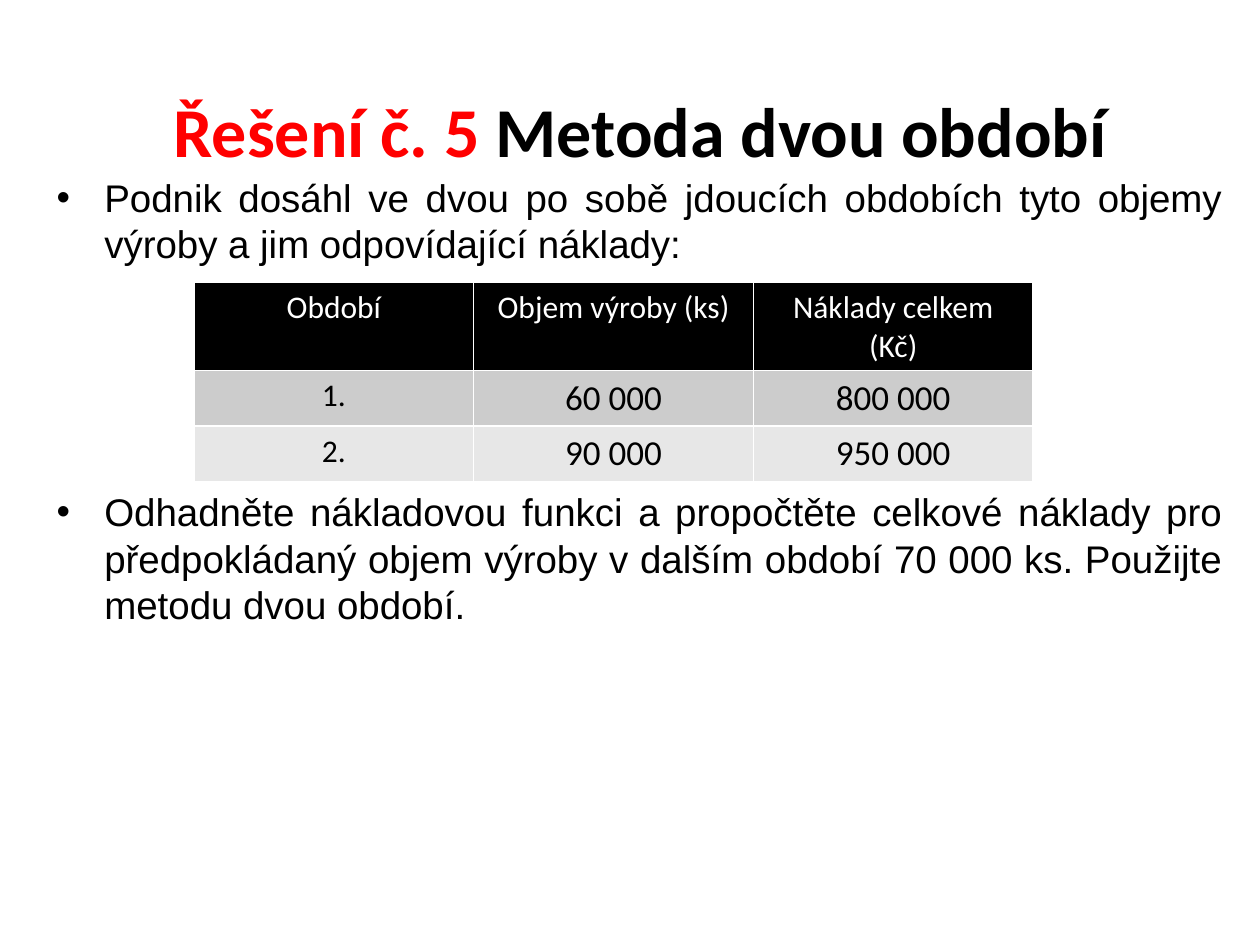
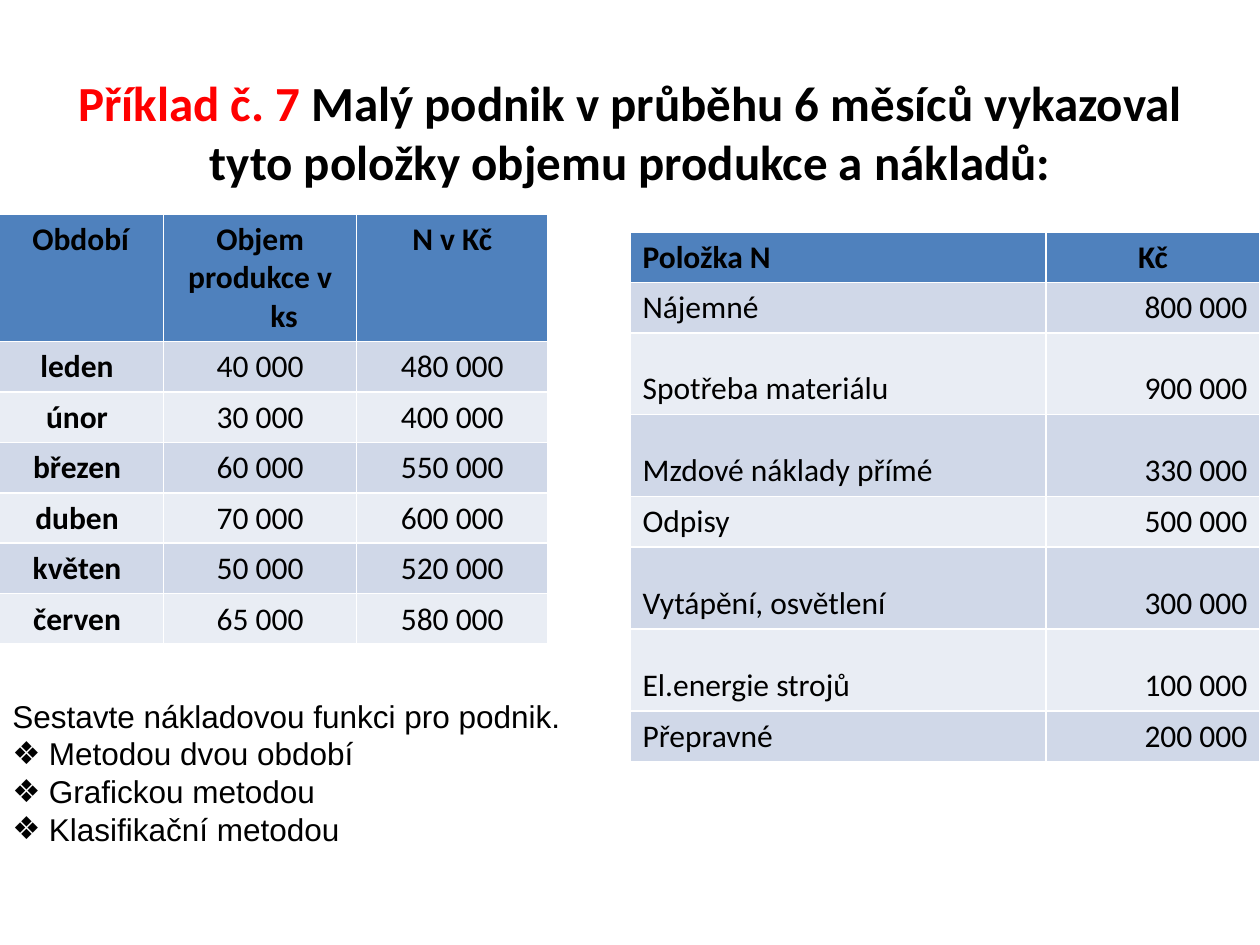
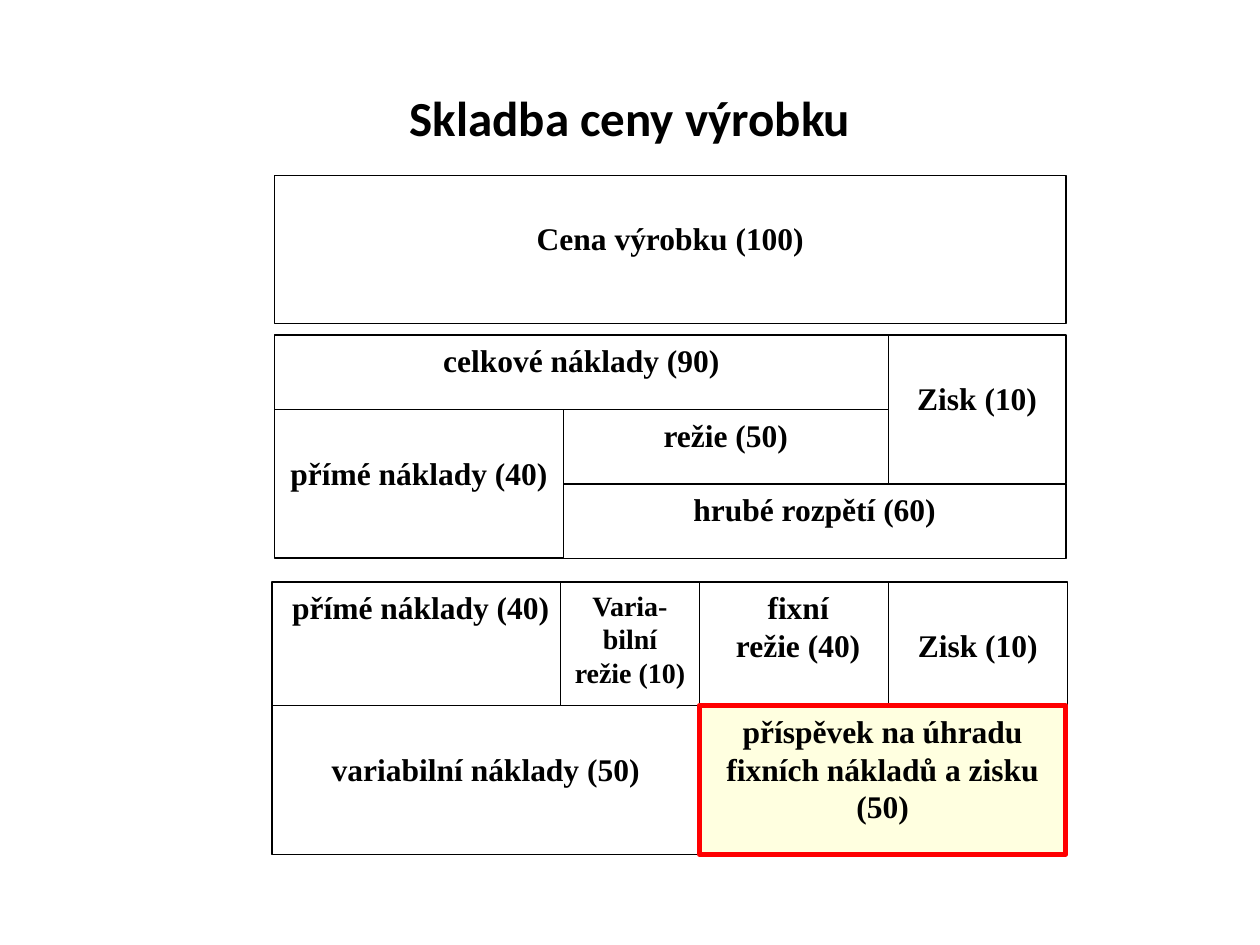
import pptx
import pptx.util
import pptx.dml.color
import pptx.enum.shapes
import pptx.enum.text
import pptx.oxml
import pptx.oxml.ns

Inches = pptx.util.Inches
Pt = pptx.util.Pt
ALIGN = pptx.enum.text.PP_ALIGN
ANCHOR = pptx.enum.text.MSO_ANCHOR
HANG = 0.38
COLORS = {
    "black": "000000", "white": "FFFFFF", "red": "FF0000", "cream": "FFFFCC",
    "blue": "4F81BD", "pale": "D0D8E8", "mist": "E9EDF4",
    "gray": "CCCCCC", "light": "E7E7E7",
}


def rgb(name):
    return pptx.dml.color.RGBColor.from_string(COLORS[name])


def node(tag, body="", **attrs):
    pairs = " ".join(f'{key}="{val}"' for key, val in attrs.items())
    space = pptx.oxml.ns.nsdecls("a")
    return pptx.oxml.parse_xml(f"<a:{tag} {space} {pairs}>{body}</a:{tag}>")


class Deck:
    def __init__(self):
        self.prs = pptx.Presentation()
        self.prs.slide_width, self.prs.slide_height = Inches(10), Inches(7.5)
        self.slide = None

    def page(self):
        self.slide = self.prs.slides.add_slide(self.prs.slide_layouts[6])

    def style(self, par, size, font, color="black", bold=False, align=ALIGN.LEFT):
        par.alignment = align
        for run in par.runs:
            run.font.size, run.font.name, run.font.bold = Pt(size), font, bold
            run.font.color.rgb = rgb(color)

    def indent(self, par, hang, mark=None):
        props = par._p.get_or_add_pPr()
        props.set("marL", str(Inches(hang)))
        props.set("indent", str(-Inches(hang)))
        if mark:
            props.append(node("buFont", typeface="Arial"))
            props.append(node("buChar", char=mark))

    def box(self, left, top, width, height, text):
        shape = self.slide.shapes.add_textbox(
            Inches(left), Inches(top), Inches(width), Inches(height))
        frame = shape.text_frame
        frame.word_wrap = True
        frame.text = text
        return frame

    def title(self, text, size, left=0.5, top=0.42, width=9, height=1.25, lead=""):
        frame = self.box(left, top, width, height, lead or text)
        frame.vertical_anchor = ANCHOR.MIDDLE
        par = frame.paragraphs[0]
        if lead:
            par.add_run().text = text
        self.style(par, size, "Calibri", bold=True, align=ALIGN.CENTER)
        if lead:
            par.runs[0].font.color.rgb = rgb("red")

    def bullets(self, left, top, width, height, text, size, mark, hang,
                gap=0, intro=False, align=ALIGN.LEFT):
        frame = self.box(left, top, width, height, text)
        for num, par in enumerate(frame.paragraphs):
            if num or not intro:
                self.indent(par, hang, mark)
            if num and gap:
                par.space_before = Pt(gap)
            self.style(par, size, "Arial", align=align)

    def table(self, left, top, cols, rows, data, fills, look, anchor=ANCHOR.TOP):
        grid = self.slide.shapes.add_table(
            len(rows), len(cols), Inches(left), Inches(top),
            Inches(sum(cols)), Inches(sum(rows))).table
        for col, width in zip(grid.columns, cols):
            col.width = Inches(width)
        for num, (row, height) in enumerate(zip(grid.rows, rows)):
            row.height = Inches(height)
            band = fills[0] if num == 0 else fills[2 - num % 2]
            for spot, cell in enumerate(row.cells):
                cell.text = data[num][spot]
                cell.vertical_anchor = anchor
                opts = dict(look(num, spot))
                hang = opts.pop("hang", HANG)
                for par in cell.text_frame.paragraphs:
                    if hang:
                        self.indent(par, hang)
                    self.style(par, font="Calibri", **opts)
                props = cell._tc.get_or_add_tcPr()
                for side in ("lnL", "lnR", "lnT", "lnB"):
                    ink = f'<a:solidFill><a:srgbClr val="{COLORS["white"]}"/></a:solidFill>'
                    props.append(node(side, ink, w=Pt(1)))
                cell.fill.solid()
                cell.fill.fore_color.rgb = rgb(band)

    def block(self, left, top, width, height, text, drop=False, size=18,
              fill="white", line="black", weight=0.75, alpha=None):
        shape = self.slide.shapes.add_shape(
            pptx.enum.shapes.MSO_SHAPE.RECTANGLE,
            Inches(left), Inches(top), Inches(width), Inches(height))
        shape.shadow.inherit = False
        shape.fill.solid()
        shape.fill.fore_color.rgb = rgb(fill)
        if alpha:
            tone = shape._element.spPr.find(".//" + pptx.oxml.ns.qn("a:srgbClr"))
            tone.append(node("alpha", val=alpha * 1000))
        shape.line.color.rgb = rgb(line)
        shape.line.width = Pt(weight)
        frame = shape.text_frame
        frame.word_wrap = True
        frame.vertical_anchor = ANCHOR.TOP
        frame.margin_top = Inches(0.35 if drop else 0.05)
        frame.text = text
        for par in frame.paragraphs:
            self.style(par, size, "Times New Roman", bold=True, align=ALIGN.CENTER)


def periods(deck):
    deck.page()
    deck.title("Metoda dvou období", 40, 0.55, 0.56, 9.06, 0.94, lead="Řešení č. 5 ")
    deck.bullets(
        0.35, 1.33, 9.45, 5.97,
        "Podnik dosáhl ve dvou po sobě jdoucích obdobích tyto objemy výroby "
        "a jim odpovídající náklady:\n"
        "Odhadněte nákladovou funkci a propočtěte celkové náklady pro "
        "předpokládaný objem výroby v dalším období 70 000 ks. "
        "Použijte metodu dvou období.",
        22, "•", HANG, gap=127, align=ALIGN.JUSTIFY)

    def look(row, col):
        value = row > 0 and col > 0
        return dict(size=20 if value else 18, color="black" if row else "white",
                    align=ALIGN.CENTER, hang=HANG if value else 0)

    data = [
        ("Období", "Objem výroby (ks)", "Náklady celkem (Kč)"),
        ("1.", "60 000", "800 000"),
        ("2.", "90 000", "950 000"),
    ]
    deck.table(1.54, 2.24, [2.22] * 3, [0.7, 0.44, 0.44], data,
               ("black", "gray", "light"), look)


def months(deck):
    deck.page()
    deck.title("Malý podnik v průběhu 6 měsíců vykazoval tyto položky objemu "
               "produkce a nákladů:", 28, lead="Příklad č. 7 ")
    fills = ("blue", "pale", "mist")

    def output(row, col):
        return dict(size=18, bold=row == 0 or col == 0, align=ALIGN.CENTER)

    def cost(row, col):
        side = ALIGN.RIGHT if row else ALIGN.CENTER
        return dict(size=18, bold=row == 0, align=side if col else ALIGN.LEFT)

    data = [
        ("Období", "Objem\nprodukce v ks", "N v Kč"),
        ("leden ", "40 000", "480 000"),
        ("únor ", "30 000", "400 000"),
        ("březen ", "60 000", "550 000"),
        ("duben ", "70 000", "600 000"),
        ("květen ", "50 000", "520 000"),
        ("červen ", "65 000", "580 000"),
    ]
    deck.table(-0.02, 1.7, [1.32, 1.53, 1.52], [1.01] + [0.4] * 6, data, fills, output)
    items = [
        ("Položka N", "Kč"),
        ("Nájemné", "800 000"),
        ("Spotřeba materiálu", "900 000"),
        ("Mzdové náklady přímé", "330 000"),
        ("Odpisy", "500 000"),
        ("Vytápění, osvětlení", "300 000"),
        ("El.energie strojů", "100 000"),
        ("Přepravné", "200 000"),
    ]
    low, high = 0.4, 0.65
    deck.table(5, 1.84, [3.3, 1.7], [low, low, high, high, low, high, high, low],
               items, fills, cost, ANCHOR.BOTTOM)
    deck.bullets(
        0, 5.48, 4.86, 1.92,
        "Sestavte nákladovou funkci pro podnik.\nMetodou dvou období\n"
        "Grafickou metodou\nKlasifikační metodou", 18, "❖", 0.29, intro=True)


def price(deck):
    deck.page()
    deck.title("Skladba ceny výrobku", 28, top=0.3)
    half, full = 0.59, 1.18
    deck.block(2.18, 1.39, 6.28, full, "Cena výrobku (100)", drop=True)
    top = 2.66
    deck.block(2.18, top, 4.87, half, "celkové náklady (90)")
    deck.block(7.05, top, 1.41, full, "Zisk (10)", drop=True)
    deck.block(4.47, top + half, 2.58, half, "režie (50)")
    deck.block(4.47, top + full, 3.99, half, "hrubé rozpětí (60)")
    deck.block(2.18, top + half, 2.29, full, "přímé náklady (40)", drop=True)
    top, tall = 4.62, 0.98
    deck.block(2.16, top + tall, 3.39, full, "variabilní náklady (50)", drop=True)
    deck.block(2.16, top, 2.36, tall, "přímé náklady (40)")
    deck.block(4.45, top, 1.1, tall, "Varia-bilní režie (10)", size=16)
    deck.block(5.55, top, 1.57, tall, "fixní\nrežie (40)")
    deck.block(7.05, top, 1.42, tall, "Zisk (10)", drop=True)
    deck.block(5.55, top + tall, 2.91, full,
               "příspěvek na úhradu\nfixních nákladů a zisku (50)",
               fill="cream", line="red", weight=2.75, alpha=60)


def main():
    deck = Deck()
    periods(deck)
    months(deck)
    price(deck)
    deck.prs.save("out.pptx")


if __name__ == "__main__":
    main()
